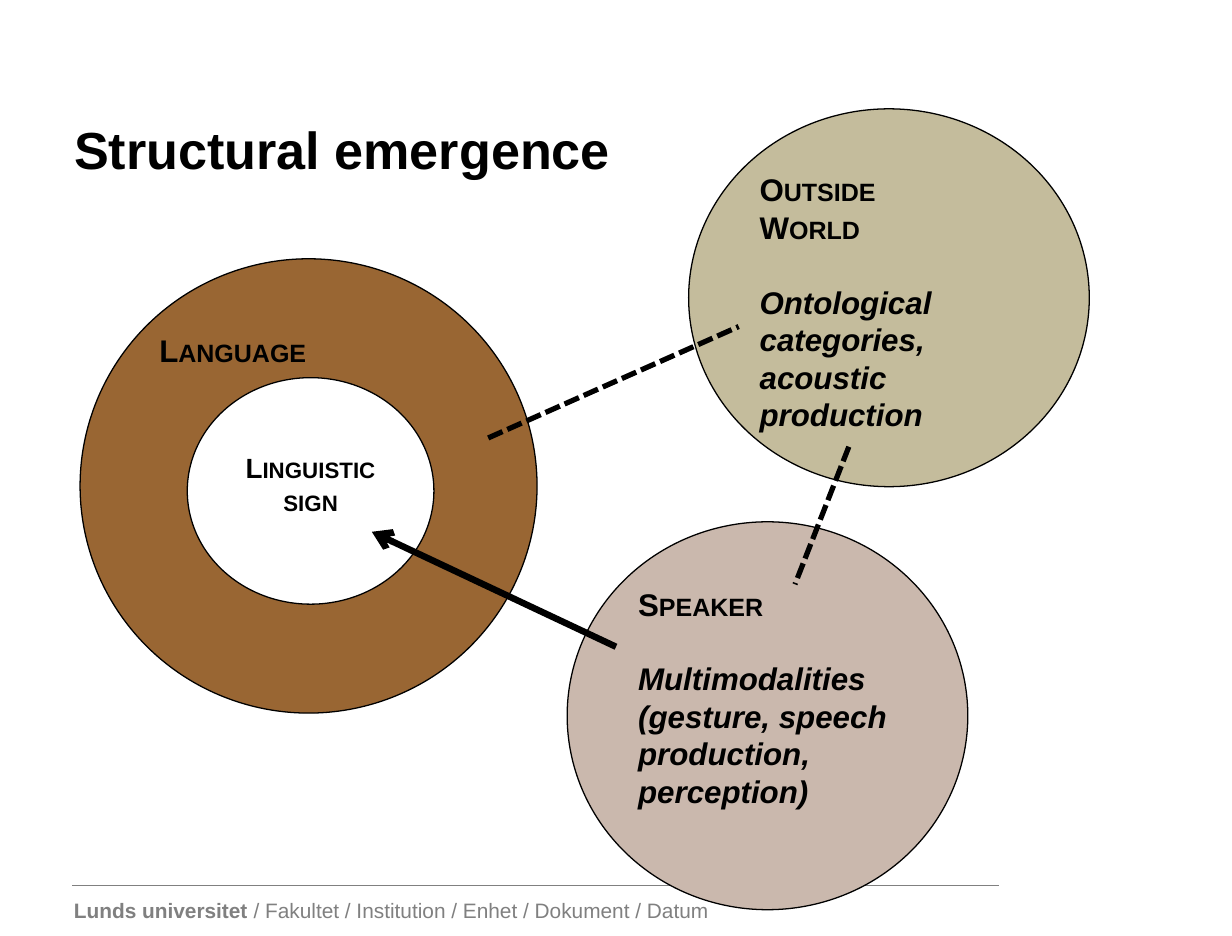
"""Build the slide on structural emergence in language."""
from dataclasses import dataclass

import pptx
import pptx.dml.color
import pptx.enum.dml
import pptx.enum.shapes
import pptx.enum.text
import pptx.oxml
import pptx.oxml.ns
import pptx.util

WIDTH = pptx.util.Cm(25)
HEIGHT = pptx.util.Cm(19)
FONT = "Arial"
COLORS = {
    "ink": "000000",
    "footer": "808080",
    "language": "996633",
    "sign": "FFFFFF",
    "world": "C4BC9C",
    "speaker": "CAB8AD",
}


@dataclass
class Area:
    """Place and size in percent of the slide."""
    left: float
    top: float
    width: float
    height: float

    def lengths(self) -> tuple[int, int, int, int]:
        return (across(self.left), down(self.top),
                across(self.width), down(self.height))


@dataclass
class Circle:
    """A domain with a small-caps heading and italic details."""
    area: Area
    color: str
    heading: list[str]
    details: list[str]
    size: int = 18
    centered: bool = False
    top_inset: float = 0.05


@dataclass
class Link:
    """A straight line between two points in percent of the slide."""
    start: tuple[float, float]
    end: tuple[float, float]
    weight: float = 3
    color: str = "ink"
    dashed: bool = False
    arrow: bool = False


CIRCLES = [
    Circle(Area(6.5, 27.65, 37.09, 48.53), "language", ["Language"], []),
    Circle(Area(15.2, 40.35, 20.02, 24.2), "sign", ["Linguistic", "sign"], [],
           size=16, centered=True, top_inset=0.32),
    Circle(Area(55.9, 11.63, 32.52, 40.37), "world", ["Outside", "World"],
           ["Ontological categories, acoustic production"]),
    Circle(Area(46.04, 55.75, 32.52, 41.44), "speaker", ["Speaker"],
           ["Multimodalities", "(gesture, speech production, perception)"]),
]
FOOTER_RULE = Link((5.87, 94.6), (81.05, 94.6), weight=0.5, color="footer")
LINKS = [
    Link((50, 69.1), (30.18, 56.82), weight=3.75, arrow=True),
    Link((39.63, 46.79), (59.96, 34.89), dashed=True),
    Link((68.9, 47.73), (64.53, 62.43), dashed=True),
]


def across(percent: float) -> int:
    return round(WIDTH * percent / 100)


def down(percent: float) -> int:
    return round(HEIGHT * percent / 100)


def rgb(name: str) -> pptx.dml.color.RGBColor:
    return pptx.dml.color.RGBColor.from_string(COLORS[name])


def set_font(font, size: float, color: str = "ink", bold: bool = True,
             italic: bool = False) -> None:
    font.name = FONT
    font.size = pptx.util.Pt(size)
    font.bold = bold
    font.italic = italic
    font.color.rgb = rgb(color)


def add_title(page) -> None:
    title = page.shapes.title
    title.left, title.top, title.width, title.height = Area(
        5, 7.49, 90.04, 16.71).lengths()
    frame = title.text_frame
    frame.auto_size = pptx.enum.text.MSO_AUTO_SIZE.NONE
    frame.vertical_anchor = pptx.enum.text.MSO_ANCHOR.MIDDLE
    frame.text = "Structural emergence"
    para = frame.paragraphs[0]
    para.alignment = pptx.enum.text.PP_ALIGN.LEFT
    set_font(para.font, 30)


def add_footer(page) -> None:
    box = page.shapes.add_textbox(*Area(5, 95.25, 53.66, 4.01).lengths())
    box.text_frame.word_wrap = False
    para = box.text_frame.paragraphs[0]
    set_font(para.font, 12, "footer", bold=False)
    name = para.add_run()
    name.text = "Lunds universitet"
    name.font.bold = True
    para.add_run().text = " / Fakultet / Institution / Enhet / Dokument / Datum"


def add_circle(page, circle: Circle) -> None:
    shape = page.shapes.add_shape(
        pptx.enum.shapes.MSO_SHAPE.OVAL, *circle.area.lengths())
    shape.shadow.inherit = False
    shape.fill.solid()
    shape.fill.fore_color.rgb = rgb(circle.color)
    shape.line.color.rgb = rgb("ink")
    shape.line.width = pptx.util.Pt(0.75)
    frame = shape.text_frame
    frame.word_wrap = True
    frame.vertical_anchor = pptx.enum.text.MSO_ANCHOR.TOP
    frame.margin_top = pptx.util.Inches(circle.top_inset)
    align = pptx.enum.text.PP_ALIGN
    heading_count = len(circle.heading)
    for index, words in enumerate(circle.heading + circle.details):
        para = frame.add_paragraph() if index else frame.paragraphs[0]
        para.text = words
        para.alignment = align.CENTER if circle.centered else align.LEFT
        if index == heading_count:
            para.space_before = pptx.util.Pt(21.5)
        set_font(para.font, circle.size, italic=index >= heading_count)
        if index < heading_count:
            para._p.get_or_add_pPr().get_or_add_defRPr().set("cap", "small")


def add_link(page, link: Link) -> None:
    (start_x, start_y), (end_x, end_y) = link.start, link.end
    line = page.shapes.add_connector(
        pptx.enum.shapes.MSO_CONNECTOR.STRAIGHT,
        across(start_x), down(start_y), across(end_x), down(end_y))
    line.line.color.rgb = rgb(link.color)
    line.line.width = pptx.util.Pt(link.weight)
    if link.dashed:
        line.line.dash_style = pptx.enum.dml.MSO_LINE.SQUARE_DOT
    namespace = pptx.oxml.ns.nsdecls("a")
    if link.arrow:
        line.line._get_or_add_ln().append(pptx.oxml.parse_xml(
            f'<a:tailEnd {namespace} type="arrow"/>'))
    line._element.spPr.append(
        pptx.oxml.parse_xml(f"<a:effectLst {namespace}/>"))


def main() -> None:
    deck = pptx.Presentation()
    deck.slide_width = WIDTH
    deck.slide_height = HEIGHT
    page = deck.slides.add_slide(deck.slide_layouts.get_by_name("Title Only"))
    add_title(page)
    add_footer(page)
    add_link(page, FOOTER_RULE)
    for circle in CIRCLES:
        add_circle(page, circle)
    for link in LINKS:
        add_link(page, link)
    deck.save("out.pptx")


if __name__ == "__main__":
    main()
